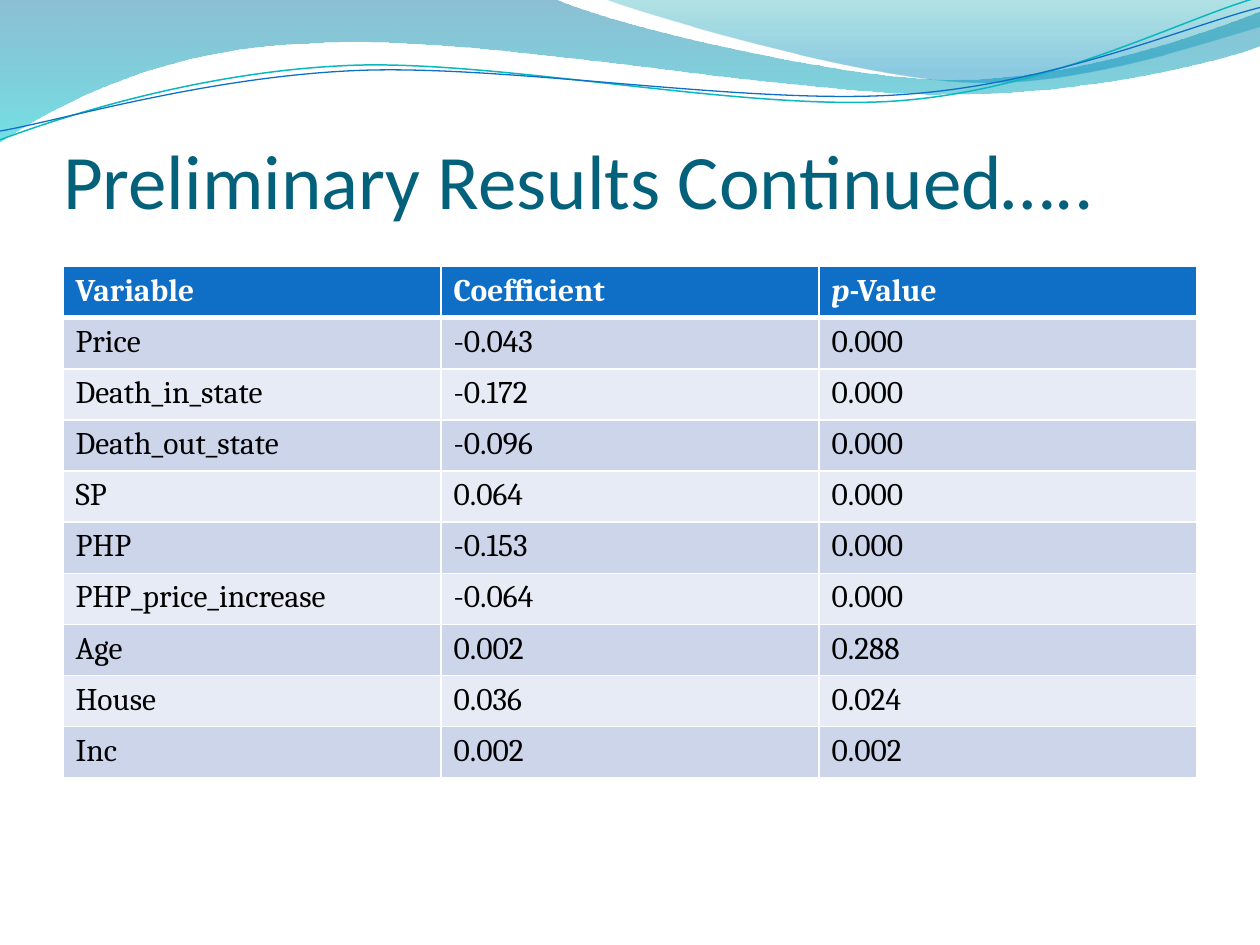
from math import cos, radians, sin

from lxml.etree import SubElement
from pptx import Presentation
from pptx.dml.color import RGBColor
from pptx.enum.text import MSO_ANCHOR, PP_ALIGN
from pptx.oxml import parse_xml
from pptx.oxml.ns import nsdecls, qn
from pptx.util import Pt

COLORS = {
    "title": "04617B", "header": "0F6FC6", "odd": "CCD5EA", "even": "E7EBF5",
    "white": "FFFFFF", "black": "000000", "teal": "0AB8BF", "blue": "0F6FC6",
    "deep": "0074A1", "aqua": "00C6CF", "sea": "00A1A9", "sky": "008BBF",
}


def turn(point, center, degrees):
    """Turn a point clockwise about a center."""
    angle = radians(degrees)
    dx, dy = point[0] - center[0], point[1] - center[1]
    return (center[0] + dx * cos(angle) - dy * sin(angle),
            center[1] + dx * sin(angle) + dy * cos(angle))


class SlideBuilder:
    title_font, table_font = "Calibri", "Cambria"
    title_size, table_size = 44, 18
    strand_tilt = 2.7

    def __init__(self, slide):
        self.slide = slide

    def color(self, name):
        return RGBColor.from_string(COLORS[name])

    def style(self, run, font, size, color, bold=False):
        run.font.name, run.font.size, run.font.bold = font, Pt(size), bold
        run.font.color.rgb = self.color(color)

    def outline(self, steps, close):
        """First step is the start; then one point is a line, three a Bezier curve."""
        (x, y), *rest = [(Pt(px), Pt(py)) for step in steps for px, py in step]
        builder = self.slide.shapes.build_freeform(x, y)
        builder.add_line_segments(rest, close=close)
        shape = builder.convert_to_shape()
        shape.shadow.inherit = False
        # Join the three line segments of each curve into one Bezier segment
        segments = iter(shape.element.spPr.findall(".//" + qn("a:lnTo")))
        for step in steps[1:]:
            first, *others = [next(segments) for _ in step]
            if others:
                first.tag = qn("a:cubicBezTo")
            for other in others:
                first.append(other[0])
                other.getparent().remove(other)
        return shape

    def wave(self, steps, stops):
        """Filled wave; stops are (position, colour, opacity in percent)."""
        shape = self.outline(steps, True)
        shape.line.fill.background()
        shape.fill.gradient()
        shape.fill.gradient_angle = 270
        for stop, (position, name, _) in zip(shape.fill.gradient_stops, stops):
            stop.position = position
            stop.color.rgb = self.color(name)
        tints = shape.element.spPr.findall(".//" + qn("a:gs") + "/" + qn("a:srgbClr"))
        for tint, (_, _, opacity) in zip(tints, stops):
            SubElement(tint, qn("a:alpha"), val=str(opacity * 1000))

    def strand(self, steps, center, name, width):
        level = [[turn(point, center, self.strand_tilt) for point in step] for step in steps]
        shape = self.outline(level, False)
        shape.rotation = 360 - self.strand_tilt
        shape.fill.background()
        shape.line.color.rgb = self.color(name)
        shape.line.width = Pt(width)

    def title(self, text, left, top, width, height):
        title = self.slide.shapes.title
        self.slide.shapes._spTree.append(title.element)  # in front of the waves
        title.left, title.top, title.width, title.height = map(Pt, (left, top, width, height))
        frame = title.text_frame
        frame.text = text
        frame.vertical_anchor = MSO_ANCHOR.MIDDLE
        frame.margin_left = frame.margin_right = frame.margin_bottom = Pt(0)
        frame.margin_top = Pt(3.6)
        frame.paragraphs[0].alignment = PP_ALIGN.LEFT
        self.style(frame.paragraphs[0].runs[0], self.title_font, self.title_size, "title")

    def borders(self, cell, top, bottom):
        widths = {"L": 1, "R": 1, "T": top, "B": bottom}
        for index, (side, width) in enumerate(widths.items()):
            cell._tc.get_or_add_tcPr().insert(index, parse_xml(
                f'<a:ln{side} {nsdecls("a")} w="{Pt(width)}"><a:solidFill>'
                f'<a:srgbClr val="{COLORS["white"]}"/></a:solidFill></a:ln{side}>'))

    def table(self, rows, left, top, width, row_height):
        """Each cell is a tuple of (text, italic) runs."""
        table = self.slide.shapes.add_table(
            len(rows), len(rows[0]), Pt(left), Pt(top), Pt(width),
            Pt(row_height * len(rows))).table
        for r, row in enumerate(rows):
            fill = "header" if r == 0 else "odd" if r % 2 else "even"
            for c, parts in enumerate(row):
                cell = table.cell(r, c)
                cell.fill.solid()
                cell.fill.fore_color.rgb = self.color(fill)
                self.borders(cell, 3 if r == 1 else 1, 3 if r == 0 else 1)
                for text, italic in parts:
                    run = cell.text_frame.paragraphs[0].add_run()
                    run.text = text
                    self.style(run, self.table_font, self.table_size,
                               "black" if r else "white", bold=r == 0)
                    run.font.italic = italic


def main():
    deck = Presentation()
    deck.slide_width, deck.slide_height = Pt(720), Pt(540)
    page = SlideBuilder(deck.slides.add_slide(deck.slide_layouts[5]))

    # Wave header
    page.wave([
        [(0, 0)], [(316.8, -0.7)],
        [(342.7, 12.2), (478.1, 45.4), (545.8, 45.4)],
        [(614.2, 45.4), (689.8, 18.7), (720, 6.5)], [(720.7, 25.9)],
        [(707.8, 31.7), (626.4, 54.7), (537.1, 54)],
        [(447.8, 54), (275, 20.2), (185, 24.5)],
        [(92.9, 25.9), (33.1, 59.8), (-0.7, 81.4)]],
        [(0, "deep", 45), (1, "aqua", 55)])
    page.wave([
        [(344.9, -0.7)],
        [(366.5, 7.9), (491, 44.6), (553.7, 46.8)],
        [(616.3, 49.7), (691.9, 23), (720, 15.1)], [(720, 0)]],
        [(0, "sea", 30), (0.8, "sky", 45)])
    page.strand([
        [(0, 79.9)],
        [(34.6, 67), (113.8, 41), (199.4, 37.4)],
        [(284.4, 33.8), (427, 64.1), (513.4, 57.6)],
        [(599.8, 51.1), (675.4, 10.8), (718.6, -1.4)]], (359.3, 41.4), "teal", 0.85)
    page.strand([
        [(0, 74.9)],
        [(33.8, 69.1), (118.1, 43.9), (203.8, 40.3)],
        [(290.2, 36.7), (429.8, 60.5), (516.2, 54)],
        [(601.9, 48.2), (677.5, 15.1), (720, 4.3)]], (359.6, 42.5), "blue", 0.75)

    # Title
    page.title("Preliminary Results Continued…..", 36, 55.4, 648, 90)

    # Regression results
    header = ((("Variable", False),), (("Coefficient", False),),
              (("p", True), ("-Value", False)))
    results = [
        ("Price", "-0.043", "0.000"),
        ("Death_in_state", "-0.172", "0.000"),
        ("Death_out_state", "-0.096", "0.000"),
        ("SP", "0.064", "0.000"),
        ("PHP", "-0.153", "0.000"),
        ("PHP_price_increase", "-0.064", "0.000"),
        ("Age", "0.002", "0.288"),
        ("House", "0.036", "0.024"),
        ("Inc", "0.002", "0.002"),
    ]
    body = [tuple(((text, False),) for text in row) for row in results]
    page.table([header, *body], 36, 152.4, 648, 29.2)

    deck.save("out.pptx")


if __name__ == "__main__":
    main()
